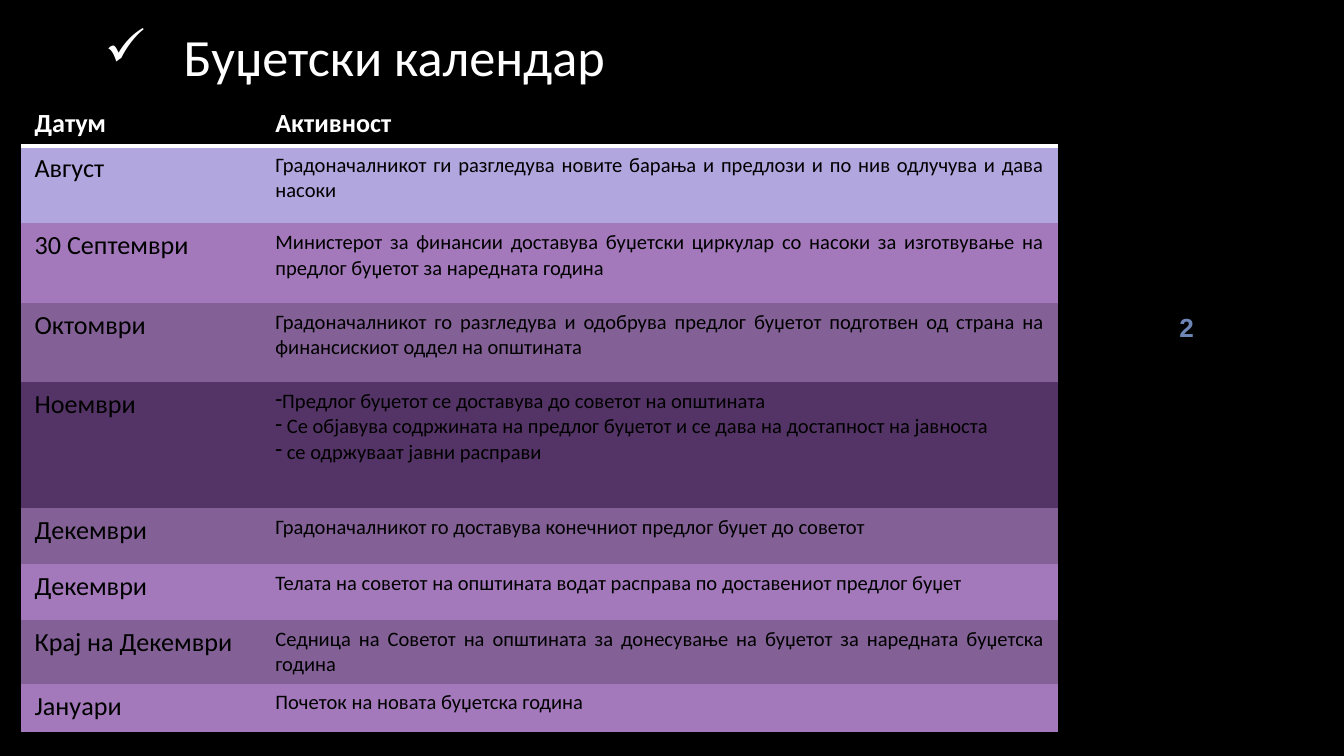
from pptx import Presentation
from pptx.dml.color import RGBColor
from pptx.enum import text
from pptx.oxml import ns, parse_xml
from pptx.util import Cm, Pt

COLORS = {
    "black": "000000", "white": "FFFFFF", "page": "6E86B6",
    "lilac": "B2A6DF", "violet": "A379BB", "plum": "836196", "dark": "543466",
}
COLS = (4.55, 15.04)
HEAD = ("Датум", "Активност")
# month, row height in cm, fill, lines of activity
ROWS = [
    ("Август", 1.46, "lilac", [
        "Градоначалникот ги разгледува новите барања и предлози и по нив одлучува и дава насоки "]),
    ("30 Септември", 1.5, "violet", [
        "Министерот за финансии доставува буџетски циркулар со насоки за изготвување на предлог буџетот за наредната година"]),
    ("Октомври", 1.5, "plum", [
        "Градоначалникот го разгледува и одобрува предлог буџетот подготвен од страна на финансискиот оддел на општината"]),
    ("Ноември", 2.38, "dark", [
        "Предлог буџетот се доставува до советот на општината ",
        " Се објавува содржината на предлог буџетот и се дава на достапност на јавноста",
        " се одржуваат јавни расправи"]),
    ("Декември", 1.06, "plum", [
        "Градоначалникот го доставува конечниот предлог буџет до советот"]),
    ("Декември", 1.06, "violet", [
        "Телата на советот на општината водат расправа по доставениот предлог буџет"]),
    ("Крај на Декември", 1.2, "plum", [
        "Седница на Советот на општината за донесување на буџетот за наредната буџетска година"]),
    ("Јануари", 0.91, "violet", ["Почеток на новата буџетска година"]),
]
HEAD_TALL = 0.86
NO_GRID = "{2D5ABB26-0587-4C30-8999-92F81FD0307C}"


def rgb(name):
    return RGBColor.from_string(COLORS[name])


def style(para, size, color, bold=False, face="Calibri", align=text.PP_ALIGN.LEFT):
    font = para.font
    font.name, font.size, font.bold = face, Pt(size), bold
    font.color.rgb = rgb(color)
    para.alignment = align


def bullet(para, mark, color, left=0):
    """Give the paragraph a bullet that hangs in a left indent in cm."""
    props = para._p.get_or_add_pPr()
    props.set("marL", str(Cm(left)))
    props.set("indent", str(-Cm(left)))
    parts = (f'<a:buClr {ns.nsdecls("a")}><a:srgbClr val="{COLORS[color]}"/></a:buClr>',
             f'<a:buChar {ns.nsdecls("a")} char="{mark}"/>')
    for at, part in enumerate(parts):
        props.insert(at, parse_xml(part))


def underline(cell, color, width):
    """Draw the bottom border of a cell."""
    cell._tc.get_or_add_tcPr().insert(0, parse_xml(
        f'<a:lnB {ns.nsdecls("a")} w="{Pt(width)}"><a:solidFill>'
        f'<a:srgbClr val="{COLORS[color]}"/></a:solidFill></a:lnB>'))


def add_box(slide, box):
    frame = slide.shapes.add_textbox(*map(Cm, box)).text_frame
    frame.word_wrap = True
    return frame


def add_title(slide, box):
    frame = add_box(slide, box)
    frame.vertical_anchor = text.MSO_ANCHOR.BOTTOM
    frame.margin_top = frame.margin_bottom = Cm(0.25)
    para = frame.paragraphs[0]
    para.text = " Буџетски календар"
    style(para, 28, "white")
    bullet(para, "✓", "white", 1.27)


def add_page(slide, box):
    para = add_box(slide, box).paragraphs[0]
    para.text = "2"
    style(para, 14, "page", True, "Arial", text.PP_ALIGN.CENTER)


def fill_cell(cell, lines, fill, **look):
    cell.fill.solid()
    cell.fill.fore_color.rgb = rgb(fill)
    cell.text = "\n".join(lines)
    for para in cell.text_frame.paragraphs:
        style(para, **look)
        if len(lines) > 1:
            bullet(para, "-", look["color"])


def add_plan(slide, left, top):
    """Place the calendar table with its top left corner at the given point."""
    talls = [HEAD_TALL] + [row[1] for row in ROWS]
    frame = slide.shapes.add_table(len(talls), len(COLS), Cm(left), Cm(top),
                                   Cm(sum(COLS)), Cm(sum(talls)))
    table = frame.table
    table.horz_banding = table.first_row = False
    for node in frame.element.iter(ns.qn("a:tableStyleId")):
        node.text = NO_GRID
    for col, wide in zip(table.columns, COLS):
        col.width = Cm(wide)
    for row, tall in zip(table.rows, talls):
        row.height = Cm(tall)
    for x, label in enumerate(HEAD):
        cell = table.cell(0, x)
        fill_cell(cell, [label], "black", size=14, color="white", bold=True)
        underline(cell, "white", 2)
    for y, (month, _, fill, lines) in enumerate(ROWS, 1):
        fill_cell(table.cell(y, 0), [month], fill, size=14, color="black")
        fill_cell(table.cell(y, 1), lines, fill, size=11, color="black",
                  align=text.PP_ALIGN.JUSTIFY)


def main():
    deck = Presentation()
    deck.slide_width, deck.slide_height = Cm(25.4), Cm(14.29)
    slide = deck.slides.add_slide(deck.slide_layouts[6])
    back = slide.background.fill
    back.solid()
    back.fore_color.rgb = rgb("black")
    add_page(slide, (20.47, 5.77, 3.91, 7.49))
    add_title(slide, (1.73, 0.2, 21.36, 1.7))
    add_plan(slide, 0.4, 1.9)
    deck.save("out.pptx")


if __name__ == "__main__":
    main()
